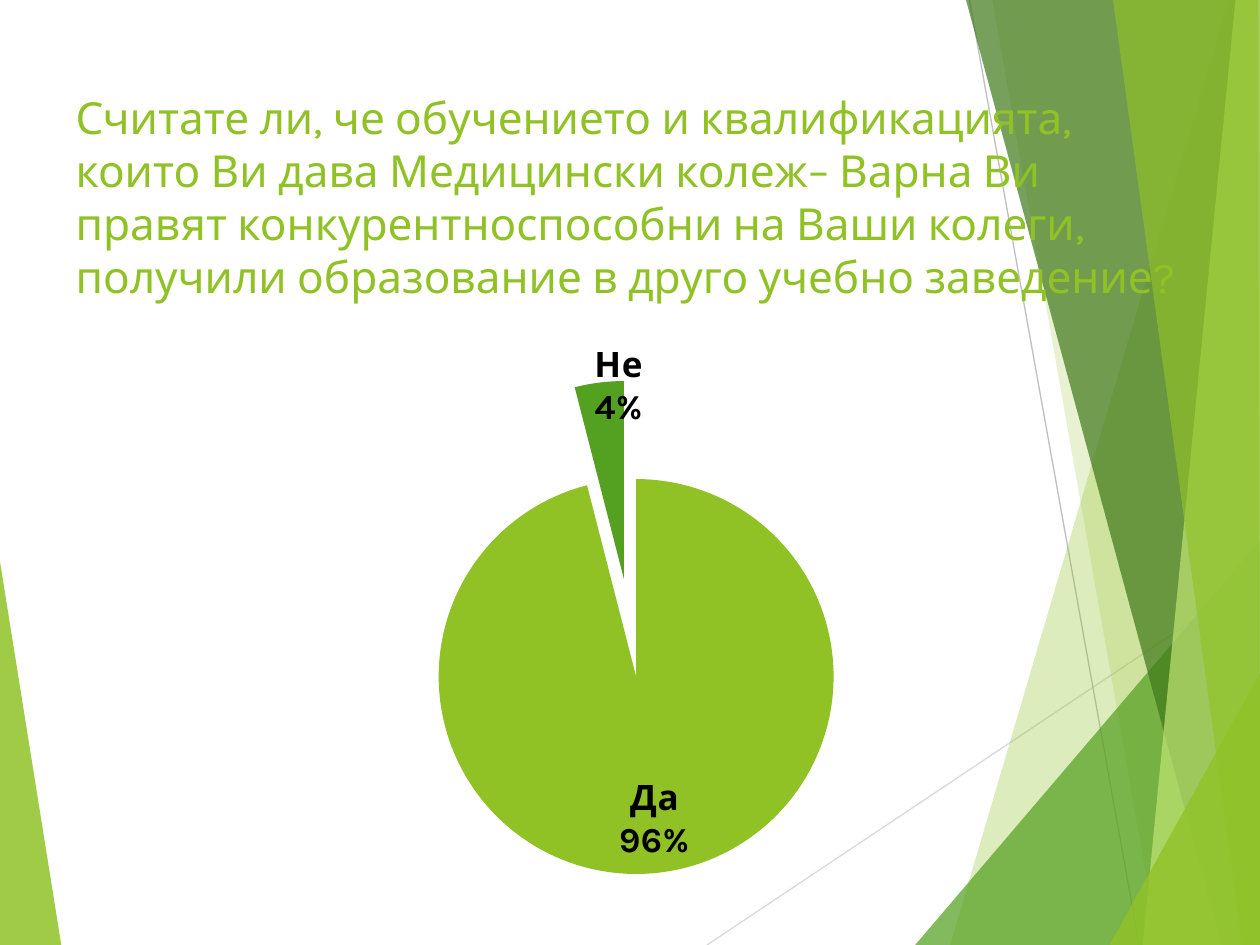
"""Build a survey slide with a pie chart over a green faceted backdrop."""
from copy import deepcopy
from lxml.etree import SubElement
from pptx import Presentation
from pptx.chart.data import CategoryChartData
from pptx.dml.color import RGBColor
from pptx.enum.chart import XL_CHART_TYPE as ChartType, XL_LABEL_POSITION as LabelPos
from pptx.enum.shapes import MSO_CONNECTOR as Connector
from pptx.enum.text import MSO_ANCHOR as Anchor, MSO_AUTO_SIZE as AutoSize, PP_ALIGN as Align
from pptx.oxml import parse_xml
from pptx.oxml.ns import nsdecls, qn
from pptx.util import Pt

COLORS = {"lime": "90C226", "green": "54A021", "forest": "3F7819", "pale": "C0E474",
          "silver": "D9D9D9", "gray": "BFBFBF", "black": "000000"}
FONT = "Karla"
W, H = 720, 540


def color(name):
    return RGBColor.from_string(COLORS[name])


def write(frame, text, size, ink, align=Align.LEFT):
    frame.text = text
    frame.word_wrap = True
    frame.auto_size = AutoSize.NONE
    frame.vertical_anchor = Anchor.TOP
    paragraph = frame.paragraphs[0]
    paragraph.alignment = align
    paragraph.line_spacing = 1.0
    font = paragraph.runs[0].font
    font.name, font.size, font.color.rgb = FONT, Pt(size), color(ink)


prs = Presentation()
prs.slide_width, prs.slide_height = Pt(W), Pt(H)
slide = prs.slides.add_slide(prs.slide_layouts[5])
shapes = slide.shapes

rays = [((404, H), (W, 329), "silver"), ((554, 0), (651, H), "gray")]
facets = [
    ([(0, 321), (35, H), (0, H)], "lime", 85),
    ([(702, 0), (543, H), (W, H), (W, 0)], "lime", 30),
    ([(567, 0), (662, H), (W, H), (W, 0)], "lime", 20),
    ([(523, H), (W, 309), (W, H)], "green", 72),
    ([(552, 0), (698, H), (W, H), (W, 0)], "forest", 70),
    ([(706, 0), (653, H), (W, H), (W, 0)], "pale", 70),
    ([(636, 0), (710, H), (W, H), (719, 0)], "lime", 65),
    ([(634, H), (W, 385), (W, H)], "lime", 80),
]

for start, end, tint in rays:
    ray = shapes.add_connector(Connector.STRAIGHT, *map(Pt, start + end))
    ray.line.color.rgb, ray.line.width = color(tint), Pt(0.75)
    SubElement(ray._element.spPr, qn("a:effectLst"))

for corners, tint, opacity in facets:
    outline = shapes.build_freeform(*corners[0], scale=Pt(1))
    outline.add_line_segments(corners[1:], close=True)
    facet = outline.convert_to_shape()
    facet.shadow.inherit = False
    facet.line.fill.background()
    facet.fill.solid()
    facet.fill.fore_color.rgb = color(tint)
    tone = facet._element.spPr.find(qn("a:solidFill"))[0]
    SubElement(tone, qn("a:alpha"), val=str(opacity * 1000))

question = shapes.title
shapes._spTree.append(question._element)
question.left, question.top, question.width, question.height = Pt(36), Pt(48), Pt(648), Pt(63)
write(question.text_frame,
      "Считате ли, че обучението и квалификацията, които Ви дава Медицински колеж– Варна Ви "
      "правят конкурентноспособни на Ваши колеги, получили образование в друго учебно заведение?",
      size=25.2, ink="lime")

answers = CategoryChartData(number_format="0")
answers.categories = ["Да", "Не"]
answers.add_series("Series 1", [96, 4])
pie = shapes.add_chart(ChartType.PIE, Pt(36), Pt(156), Pt(648), Pt(354), answers).chart
pie.has_legend = pie.has_title = False
pie.font.name, pie.font.size, pie.font.color.rgb = FONT, Pt(10), color("black")
plot = pie.plots[0]
plot.vary_by_categories = True
votes = plot.series[0]
for index, tint in enumerate(["lime", "green"]):
    slice_fill = votes.points[index].format.fill
    slice_fill.solid()
    slice_fill.fore_color.rgb = color(tint)
votes._element.find(qn("c:dPt")).addprevious(parse_xml(f'<c:explosion {nsdecls("c")} val="25"/>'))

labels = votes.data_labels
labels.show_percentage = labels.show_category_name = True
labels.show_value = False
labels.number_format, labels.number_format_is_linked = "0%", False
labels.position = LabelPos.INSIDE_END
labels.font.name, labels.font.size, labels.font.bold = FONT, Pt(20), True
labels.font.color.rgb = color("black")

label_format = [part for part in labels._element if part.tag != qn("c:showLeaderLines")]
for index, (dx, dy) in enumerate([(0.026, -0.005), (-0.005, -0.073)]):
    answer_label = parse_xml(
        f'<c:dLbl {nsdecls("c")}><c:idx val="{index}"/><c:layout><c:manualLayout>'
        f'<c:x val="{dx}"/><c:y val="{dy}"/></c:manualLayout></c:layout></c:dLbl>')
    answer_label.extend(deepcopy(part) for part in label_format)
    labels._element.insert(index, answer_label)

layout = parse_xml(
    f'<c:layout {nsdecls("c")}><c:manualLayout><c:layoutTarget val="inner"/>'
    '<c:xMode val="edge"/><c:yMode val="edge"/><c:x val="0.28"/><c:y val="0.174"/>'
    '<c:w val="0.44"/><c:h val="0.797"/></c:manualLayout></c:layout>')
plot_area = pie._chartSpace.chart.plotArea
for old in plot_area.findall(qn("c:layout")):
    plot_area.remove(old)
plot_area.insert(0, layout)

prs.save("out.pptx")
